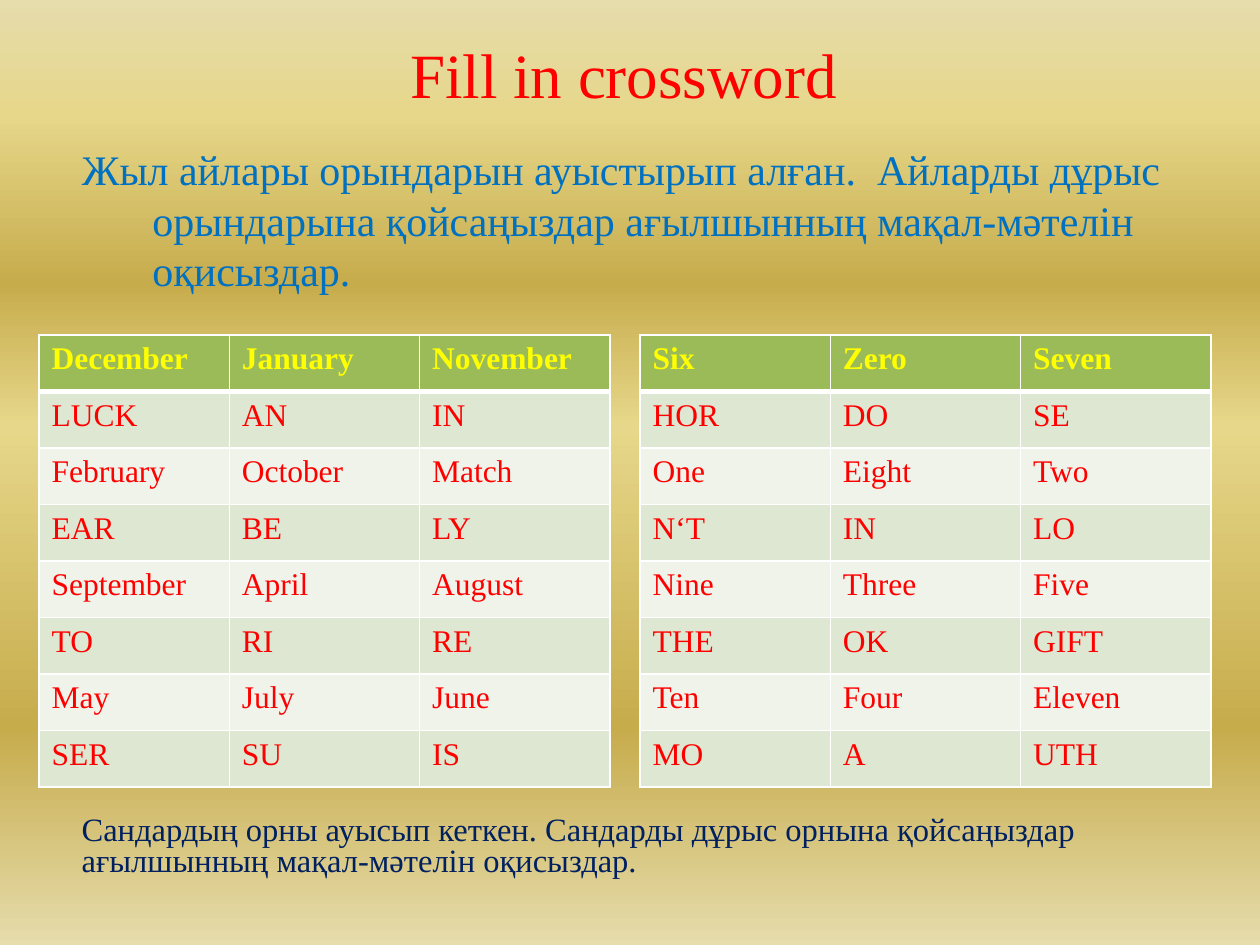
import pptx
import pptx.dml.color
import pptx.enum.text
import pptx.oxml
import pptx.oxml.ns
import pptx.util

Inches = pptx.util.Inches
RGBColor = pptx.dml.color.RGBColor
Align = pptx.enum.text.PP_ALIGN
Anchor = pptx.enum.text.MSO_ANCHOR

FONT = "Times New Roman"
COLORS = {
    "title": "FF0000",
    "task": "0070C0",
    "note": "002060",
    "header_text": "FFFF00",
    "cell_text": "FF0000",
    "header_fill": "9BBB59",
    "odd_fill": "DEE7D1",
    "even_fill": "EFF3EA",
    "border": "FFFFFF",
    "pale": "E6DCAC",
    "light": "E6D78A",
    "gold": "C7AC4C",
}
BACKGROUND_STOPS = [
    (0, "pale"), (12, "light"), (30, "gold"),
    (45, "light"), (77, "gold"), (100, "pale"),
]
MONTHS = [
    ["December", "January", "November"],
    ["LUCK", "AN", "IN"],
    ["February", "October", "Match"],
    ["EAR", "BE", "LY"],
    ["September", "April", "August"],
    ["TO", "RI", "RE"],
    ["May", "July", "June"],
    ["SER", "SU", "IS"],
]
NUMBERS = [
    ["Six", "Zero", "Seven"],
    ["HOR", "DO", "SE"],
    ["One", "Eight", "Two"],
    ["N‘T", "IN", "LO"],
    ["Nine", "Three", "Five"],
    ["THE", "OK", "GIFT"],
    ["Ten", "Four", "Eleven"],
    ["MO", "A", "UTH"],
]


def write_text(text_frame, text, size, color, bold=False, align=Align.LEFT,
               anchor=Anchor.TOP, line_spacing=None, hanging=None):
    text_frame.word_wrap = True
    text_frame.vertical_anchor = anchor
    paragraph = text_frame.paragraphs[0]
    paragraph.alignment = align
    if line_spacing:
        paragraph.line_spacing = line_spacing
    if hanging:
        properties = paragraph._p.get_or_add_pPr()
        properties.set("marL", str(hanging))
        properties.set("indent", str(-hanging))
    run = paragraph.add_run()
    run.text = text
    run.font.name = FONT
    run.font.size = pptx.util.Pt(size)
    run.font.bold = bold
    run.font.color.rgb = RGBColor.from_string(COLORS[color])


def place(shape, box):
    shape.left, shape.top, shape.width, shape.height = map(Inches, box)


def paint_background(slide):
    fill = slide.background.fill
    fill.gradient()
    fill.gradient_angle = 270
    stop_list = slide.background._cSld.find(".//" + pptx.oxml.ns.qn("a:gsLst"))
    for stop in list(stop_list):
        stop_list.remove(stop)
    for position, color in BACKGROUND_STOPS:
        stop_list.append(pptx.oxml.parse_xml(
            f'<a:gs {pptx.oxml.ns.nsdecls("a")} pos="{position * 1000}">'
            f'<a:srgbClr val="{COLORS[color]}"/></a:gs>'))


def add_title(slide, box):
    title = slide.shapes.title
    place(title, box)
    write_text(title.text_frame, "Fill in crossword", 36, "title",
               align=Align.CENTER, anchor=Anchor.MIDDLE)


def add_task(slide, box):
    subtitle = slide.placeholders[1]
    place(subtitle, box)
    write_text(
        subtitle.text_frame,
        "Жыл айлары орындарын ауыстырып алған.  Айларды дұрыс орындарына "
        "қойсаңыздар ағылшынның мақал-мәтелін оқисыздар.",
        24, "task", hanging=Inches(0.56))


def set_borders(cell, widths):
    properties = cell._tc.get_or_add_tcPr()
    for index, (side, width) in enumerate(widths.items()):
        properties.insert(index, pptx.oxml.parse_xml(
            f'<a:{side} {pptx.oxml.ns.nsdecls("a")} w="{pptx.util.Pt(width)}">'
            f'<a:solidFill><a:srgbClr val="{COLORS["border"]}"/></a:solidFill>'
            f'</a:{side}>'))


def add_word_table(slide, box, rows):
    frame = slide.shapes.add_table(len(rows), len(rows[0]), *map(Inches, box))
    table = frame.table
    for row_index, words in enumerate(rows):
        is_header = row_index == 0
        if is_header:
            fill = "header_fill"
        else:
            fill = "odd_fill" if row_index % 2 else "even_fill"
        for column_index, word in enumerate(words):
            cell = table.cell(row_index, column_index)
            cell.fill.solid()
            cell.fill.fore_color.rgb = RGBColor.from_string(COLORS[fill])
            set_borders(cell, {
                "lnL": 1, "lnR": 1,
                "lnT": 3 if row_index == 1 else 1,
                "lnB": 3 if is_header else 1,
            })
            write_text(cell.text_frame, word, 18,
                       "header_text" if is_header else "cell_text",
                       bold=is_header)


def add_note(slide, box):
    text_box = slide.shapes.add_textbox(*map(Inches, box))
    write_text(
        text_box.text_frame,
        "Сандардың орны ауысып кеткен. Сандарды дұрыс орнына қойсаңыздар "
        "ағылшынның мақал-мәтелін оқисыздар.",
        18.6, "note", anchor=Anchor.MIDDLE, line_spacing=0.8)


def main():
    presentation = pptx.Presentation()
    presentation.slide_width = Inches(10)
    presentation.slide_height = Inches(7.5)
    slide = presentation.slides.add_slide(presentation.slide_layouts[0])
    paint_background(slide)
    add_title(slide, (0.7, 0.23, 8.5, 0.7))
    add_task(slide, (0.55, 1.09, 8.91, 4.3))
    for left, rows in ((0.31, MONTHS), (5.08, NUMBERS)):
        add_word_table(slide, (left, 2.66, 4.53, 3.59), rows)
    add_note(slide, (0.55, 6.41, 8.5, 0.63))
    presentation.save("out.pptx")


if __name__ == "__main__":
    main()
